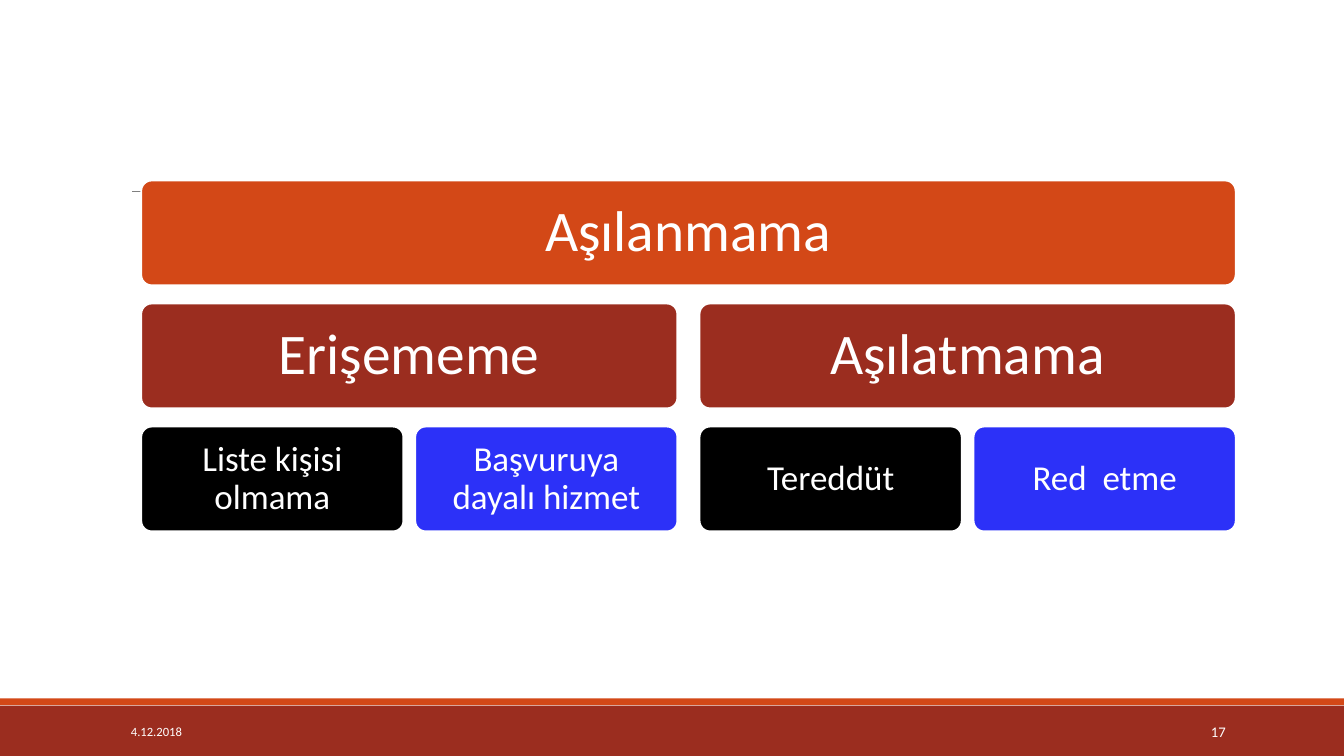
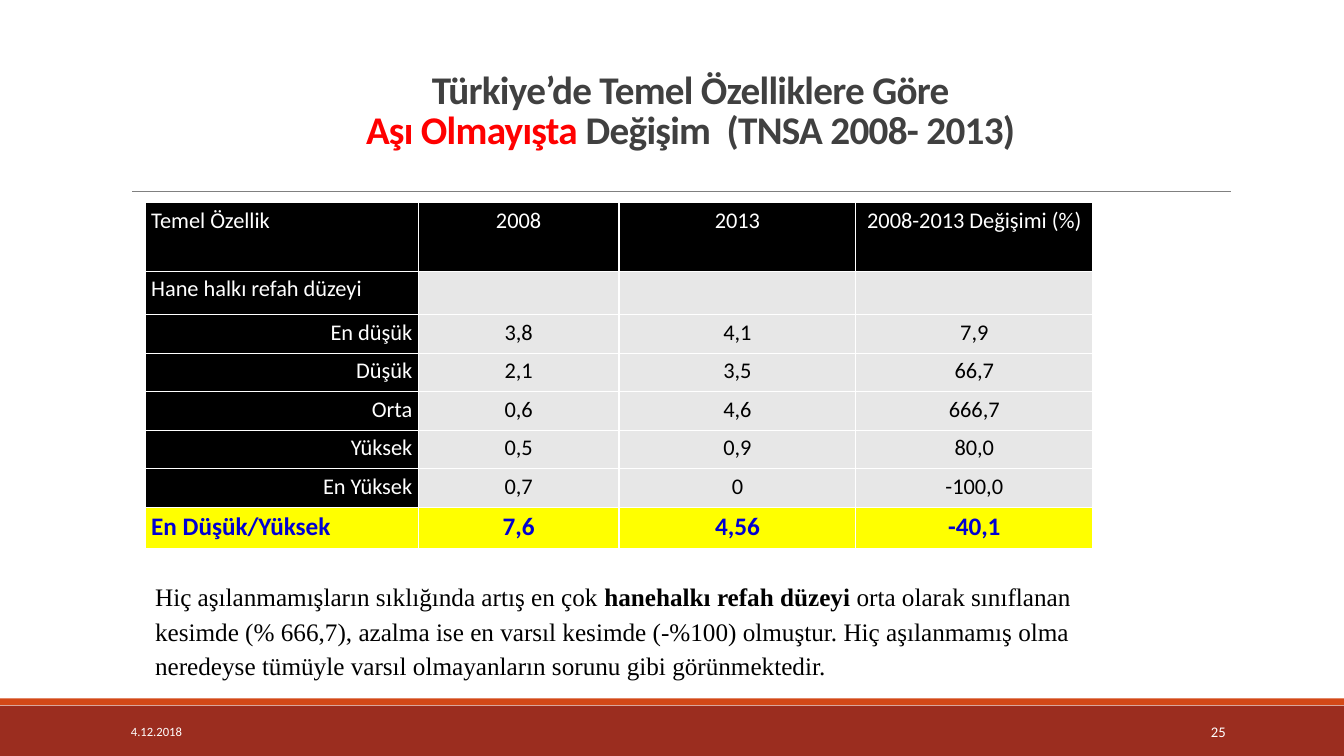
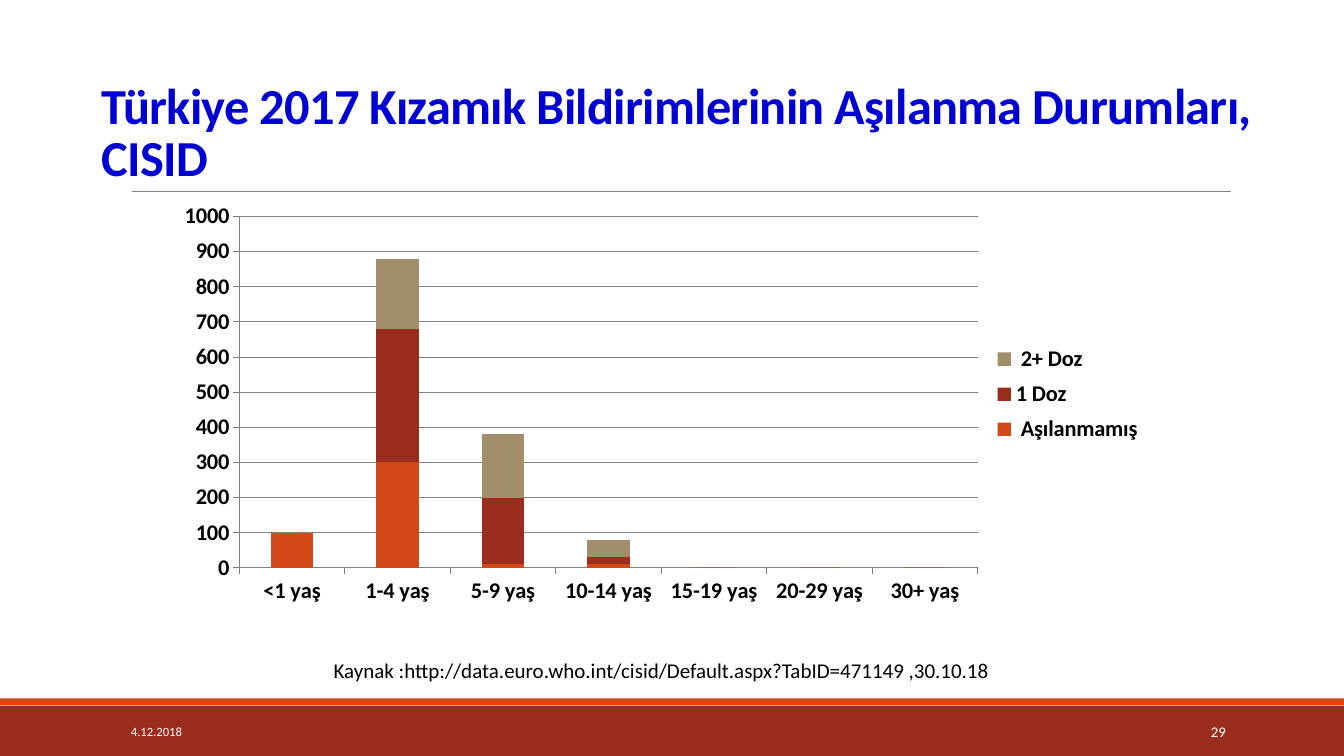
from lxml.etree import SubElement
from pptx import Presentation
from pptx.chart.data import CategoryChartData
from pptx.dml.color import RGBColor
from pptx.enum.chart import XL_CHART_TYPE, XL_LEGEND_POSITION, XL_TICK_MARK
from pptx.enum.shapes import MSO_CONNECTOR, MSO_SHAPE
from pptx.enum.text import MSO_ANCHOR as ANCHOR, MSO_AUTO_SIZE, PP_ALIGN as ALIGN
from pptx.oxml.ns import qn
from pptx.util import Cm, Pt

WHITE = RGBColor(0xFF, 0xFF, 0xFF)
BLACK = RGBColor(0, 0, 0)
ORANGE = RGBColor(0xD3, 0x48, 0x17)
BRICK = RGBColor(0x9B, 0x2D, 0x1F)
SAND = RGBColor(0xA2, 0x8E, 0x6A)
BLUE = RGBColor(0x2C, 0x31, 0xF8)
NAVY = RGBColor(0, 0, 0xD2)
RED = RGBColor(0xFF, 0, 0)
YELLOW = RGBColor(0xFF, 0xFF, 0)
GRAY = RGBColor(0x80, 0x80, 0x80)
DARK_GRAY = RGBColor(0x40, 0x40, 0x40)
LIGHT_GRAY = RGBColor(0xE7, 0xE7, 0xE7)

SLIDE_W, SLIDE_H = 33.87, 19.05
TITLE_ONLY, BLANK = 5, 6
DATE = "4.12.2018"


def write(frame, *runs, size=18, color=BLACK, bold=False, font="Calibri",
          align=ALIGN.LEFT, anchor=ANCHOR.TOP, spacing=1.0, margins=(0.25, 0.13)):
    """Fill one paragraph; a run is a text or (text, {"color", "bold"}), and "\\n" breaks the line."""
    frame.word_wrap = True
    frame.auto_size = MSO_AUTO_SIZE.NONE
    frame.vertical_anchor = anchor
    frame.margin_left = frame.margin_right = Cm(margins[0])
    frame.margin_top = frame.margin_bottom = Cm(margins[1])
    paragraph = frame.paragraphs[0]
    paragraph.alignment = align
    paragraph.line_spacing = spacing
    for item in runs:
        if item == "\n":
            paragraph.add_line_break()
            continue
        text, changes = (item, {}) if isinstance(item, str) else item
        run = paragraph.add_run()
        run.text = text
        run.font.name = font
        run.font.size = Pt(size)
        run.font.bold = changes.get("bold", bold)
        run.font.color.rgb = changes.get("color", color)


def add_text(slide, box, *runs, **style):
    write(slide.shapes.add_textbox(*map(Cm, box)).text_frame, *runs, **style)


def add_box(slide, kind, box, fill):
    shape = slide.shapes.add_shape(kind, *map(Cm, box))
    shape.shadow.inherit = False
    shape.fill.solid()
    shape.fill.fore_color.rgb = fill
    shape.line.fill.background()
    return shape


def decorate_master(master, slide):
    """Draw the bands and title rule, then move them to the master."""
    base = add_box(slide, MSO_SHAPE.RECTANGLE, (0, 17.78, SLIDE_W, 1.27), BRICK)
    stripe = add_box(slide, MSO_SHAPE.RECTANGLE, (0, 17.6, SLIDE_W, 0.17), ORANGE)
    rule = slide.shapes.add_connector(
        MSO_CONNECTOR.STRAIGHT, Cm(3.33), Cm(4.82), Cm(31.01), Cm(4.82))
    rule.line.color.rgb = GRAY
    rule.line.width = Pt(0.5)
    SubElement(rule.element.find(qn("p:spPr")), qn("a:effectLst"))
    for part in (base, stripe, rule):
        master.shapes.element.append(part.element)


def add_footer(slide, number):
    style = dict(color=WHITE, anchor=ANCHOR.MIDDLE)
    add_text(slide, (3.05, 17.93, 6.86, 1.02), DATE, size=9, **style)
    add_text(slide, (27.51, 17.93, 3.63, 1.02), number, size=10.5, align=ALIGN.RIGHT, **style)


def set_title(slide, box, *runs, **style):
    title = slide.shapes.title
    title.left, title.top, title.width, title.height = map(Cm, box)
    write(title.text_frame, *runs, bold=True, anchor=ANCHOR.BOTTOM, spacing=0.85, **style)
    for properties in title.element.iter(qn("a:rPr")):
        properties.set("spc", "-50")


def add_hierarchy(slide, node, left, top, width, level=0):
    """Place a node and split its width evenly among its children below."""
    height, row_gap = 2.64, 0.46
    column_gap = (0.56, 0.3, 0)[level]
    text, fill, children = node
    card = add_box(slide, MSO_SHAPE.ROUNDED_RECTANGLE, (left, top, width, height), fill)
    card.adjustments[0] = 0.1
    card.line.color.rgb = WHITE
    card.line.width = Pt(1.25)
    size, margin = (41, 0.5) if children else (25, 0.33)
    write(card.text_frame, text, size=size, color=WHITE, align=ALIGN.CENTER,
          anchor=ANCHOR.MIDDLE, spacing=0.9, margins=(margin, margin))
    if children:
        child_width = (width - column_gap * (len(children) - 1)) / len(children)
        for index, child in enumerate(children):
            add_hierarchy(slide, child, left + index * (child_width + column_gap),
                          top + height + row_gap, child_width, level + 1)


def add_wealth_table(slide, box, rows, widths, heights):
    table = slide.shapes.add_table(len(rows), len(widths), *map(Cm, box)).table
    table.horz_banding = False
    for column, width in zip(table.columns, widths):
        column.width = Cm(width)
    last = len(rows) - 1
    for r, (row, height) in enumerate(zip(rows, heights)):
        table.rows[r].height = Cm(height)
        for c, text in enumerate(row):
            if r == last:
                fill, color = YELLOW, NAVY
            elif r == 0 or c == 0:
                fill, color = BLACK, WHITE
            else:
                fill, color = LIGHT_GRAY, BLACK
            if c:
                align = ALIGN.CENTER
            else:
                align = ALIGN.RIGHT if 1 < r < last else ALIGN.LEFT
            cell = table.cell(r, c)
            cell.fill.solid()
            cell.fill.fore_color.rgb = fill
            cell.margin_left = cell.margin_right = Cm(0.15)
            cell.margin_top = cell.margin_bottom = Cm(0)
            write_cell(cell, text, size=18 if r == last else 16, color=color,
                       bold=r == last, align=align)


def write_cell(cell, text, **style):
    write(cell.text_frame, text, spacing=1.15, margins=(0.15, 0), **style)


def set_layout(parent, x, y, w, h, inner=False):
    """Fix the place of a chart part, in fractions of the chart."""
    for old in parent.findall(qn("c:layout")):
        parent.remove(old)
    layout = SubElement(parent, qn("c:layout"))
    manual = SubElement(layout, qn("c:manualLayout"))
    values = [("layoutTarget", "inner")] if inner else []
    values += [("xMode", "edge"), ("yMode", "edge"), ("x", x), ("y", y), ("w", w), ("h", h)]
    for tag, value in values:
        SubElement(manual, qn("c:" + tag)).set("val", str(value))
    parent.insert(0 if inner else 1, layout)


def add_dose_chart(slide, box, ages, doses):
    data = CategoryChartData()
    data.categories = ages
    for name, values, _ in doses:
        data.add_series(name, values)
    chart = slide.shapes.add_chart(XL_CHART_TYPE.COLUMN_STACKED, *map(Cm, box), data).chart
    chart.has_title = False
    chart.font.name = "Calibri"
    chart.font.size = Pt(16)
    chart.font.bold = True
    chart.font.color.rgb = BLACK
    plot = chart.plots[0]
    plot.vary_by_categories = False
    plot.gap_width, plot.overlap = 150, 100
    for series, (_, _, color) in zip(plot.series, doses):
        series.format.fill.solid()
        series.format.fill.fore_color.rgb = color
    for axis in (chart.category_axis, chart.value_axis):
        axis.major_tick_mark = XL_TICK_MARK.OUTSIDE
        axis.format.line.color.rgb = GRAY
    counts = chart.value_axis
    counts.minimum_scale, counts.maximum_scale, counts.major_unit = 0, 1000, 100
    counts.major_gridlines.format.line.color.rgb = GRAY
    chart.has_legend = True
    chart.legend.position = XL_LEGEND_POSITION.RIGHT
    chart.legend.include_in_layout = False
    plot_area = next(chart.element.iter(qn("c:plotArea")))
    legend = next(chart.element.iter(qn("c:legend")))
    set_layout(plot_area, 0.07, 0.05, 0.74, 0.84, inner=True)
    set_layout(legend, 0.81, 0.34, 0.18, 0.27)


def build_causes(slide):
    tree = ("Aşılanmama", ORANGE, [
        ("Erişememe", BRICK, [("Liste kişisi olmama", BLACK, []),
                              ("Başvuruya dayalı hizmet", BLUE, [])]),
        ("Aşılatmama", BRICK, [("Tereddüt", BLACK, []), ("Red  etme", BLUE, [])]),
    ])
    add_hierarchy(slide, tree, 3.56, 4.55, 27.58)
    add_footer(slide, "17")


def build_wealth(slide):
    set_title(slide, (6.45, 1.2, 21.9, 2.77), "Türkiye’de Temel Özelliklere Göre", "\n",
              ("Aşı Olmayışta ", {"color": RED}), "Değişim  (TNSA 2008- 2013)",
              size=28, color=DARK_GRAY, align=ALIGN.CENTER)
    rows = [
        ("Temel Özellik", "2008", "2013", "2008-2013 Değişimi (%)"),
        ("Hane halkı refah düzeyi", "", "", ""),
        ("En düşük", "3,8", "4,1", "7,9"),
        ("Düşük", "2,1", "3,5", "66,7"),
        ("Orta", "0,6", "4,6", "666,7"),
        ("Yüksek", "0,5", "0,9", "80,0"),
        ("En Yüksek", "0,7", "0", "-100,0"),
        ("En Düşük/Yüksek", "7,6", "4,56", "-40,1"),
    ]
    add_wealth_table(slide, (3.66, 5.11, 23.88, 8.69), rows,
                     widths=(6.88, 5.06, 5.97, 5.97),
                     heights=(1.73, 1.09, *[0.97] * 5, 1.04))
    add_text(slide, (3.66, 14.4, 23.88, 2.92),
             "Hiç aşılanmamışların sıklığında artış en çok ",
             ("hanehalkı refah düzeyi", {"bold": True}),
             " orta olarak sınıflanan kesimde (% 666,7), azalma ise en varsıl kesimde "
             "(-%100) olmuştur. Hiç aşılanmamış olma neredeyse tümüyle varsıl "
             "olmayanların sorunu gibi görünmektedir.",
             font="Times New Roman", spacing=1.15)
    add_footer(slide, "25")


def build_measles(slide):
    set_title(slide, (2.31, 0.79, 30, 4.04),
              "Türkiye 2017 Kızamık Bildirimlerinin Aşılanma Durumları, CISID",
              size=36, color=NAVY)
    ages = ["<1 yaş", "1-4 yaş", "5-9 yaş", "10-14 yaş", "15-19 yaş", "20-29 yaş", "30+ yaş"]
    doses = [
        (" Aşılanmamış", (100, 300, 10, 10, 0, 0, 0), ORANGE),
        ("1 Doz", (0, 380, 190, 20, 0, 0, 0), BRICK),
        (" 2+ Doz", (0, 200, 180, 50, 0, 0, 0), SAND),
    ]
    add_dose_chart(slide, (4.27, 4.93, 25.15, 10.54), ages, doses)
    add_text(slide, (8.23, 16.46, 17.42, 1.19),
             "Kaynak :http://data.euro.who.int/cisid/Default.aspx?TabID=471149 ,30.10.18",
             size=15, margins=(0.18, 0.1))
    add_footer(slide, "29")


def main():
    deck = Presentation()
    deck.slide_width, deck.slide_height = Cm(SLIDE_W), Cm(SLIDE_H)
    pages = [(BLANK, build_causes), (TITLE_ONLY, build_wealth), (TITLE_ONLY, build_measles)]
    for index, (layout, build) in enumerate(pages):
        slide = deck.slides.add_slide(deck.slide_layouts[layout])
        if index == 0:
            decorate_master(deck.slide_master, slide)
        build(slide)
    deck.save("out.pptx")


if __name__ == "__main__":
    main()
